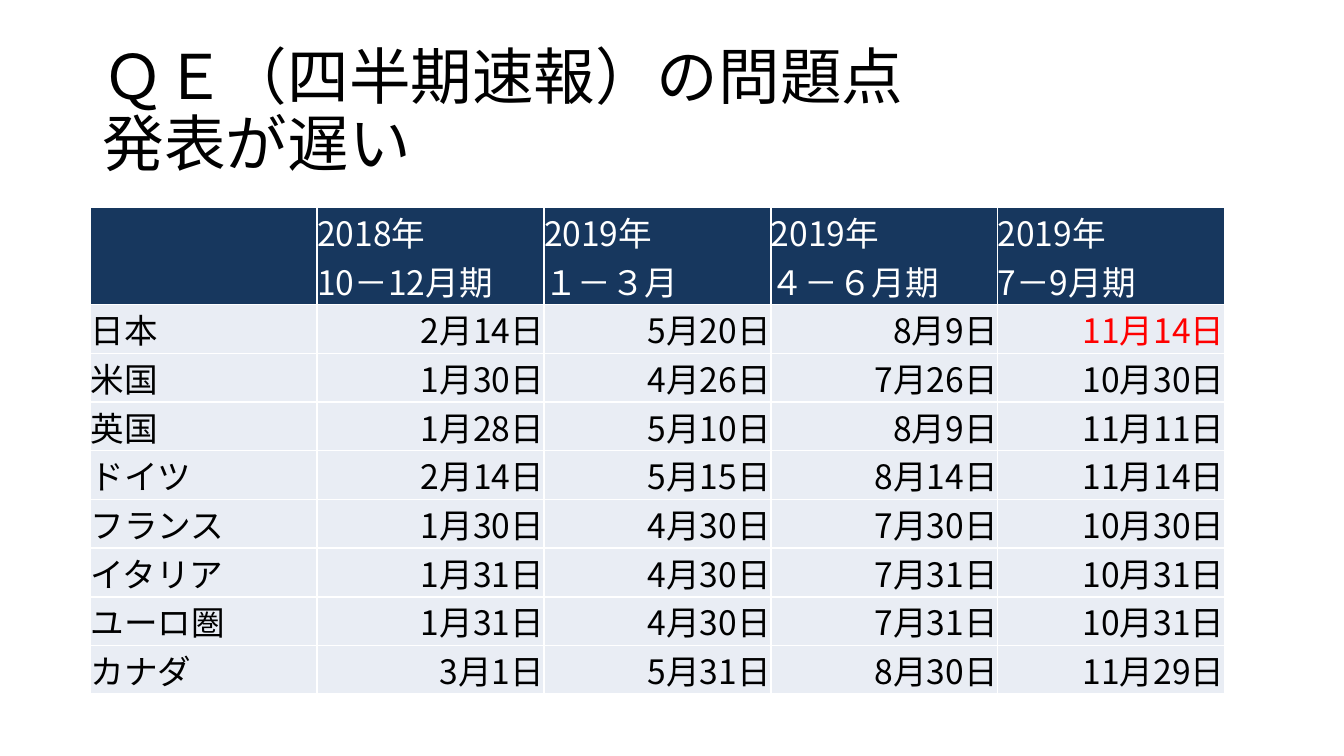
from lxml import etree
from pptx import Presentation
from pptx.dml.color import RGBColor
from pptx.enum.text import MSO_ANCHOR, MSO_AUTO_SIZE, PP_ALIGN
from pptx.oxml.ns import qn
from pptx.util import Cm, Pt

LEFT, RIGHT = PP_ALIGN.LEFT, PP_ALIGN.RIGHT
MIDDLE = MSO_ANCHOR.MIDDLE
NO_AUTOFIT = MSO_AUTO_SIZE.NONE
TITLE_ONLY = 5
FONT = "Noto Sans CJK JP"
COLORS = {
    "header": "17375E",
    "body": "E9EDF4",
    "border": "FFFFFF",
    "header_text": "FFFFFF",
    "text": "000000",
    "late": "FF0000",
}

TITLE = "ＱＥ（四半期速報）の問題点　\v発表が遅い"
PERIODS = ["", "2018年\n10－12月期", "2019年\n１－３月", "2019年\n４－６月期", "2019年\n7－9月期"]
RELEASES = [
    ["日本", "2月14日", "5月20日", "8月9日", "11月14日"],
    ["米国", "1月30日", "4月26日", "7月26日", "10月30日"],
    ["英国", "1月28日", "5月10日", "8月9日", "11月11日"],
    ["ドイツ", "2月14日", "5月15日", "8月14日", "11月14日"],
    ["フランス", "1月30日", "4月30日", "7月30日", "10月30日"],
    ["イタリア", "1月31日", "4月30日", "7月31日", "10月31日"],
    ["ユーロ圏", "1月31日", "4月30日", "7月31日", "10月31日"],
    ["カナダ", "3月1日", "5月31日", "8月30日", "11月29日"],
]
LATE_CELL = (1, 4)


def rgb(name):
    return RGBColor.from_string(COLORS[name])


def format_text(tf, size, color, align):
    for p in tf.paragraphs:
        p.alignment = align
        for r in p.runs:
            r.font.size = Pt(size)
            r.font.bold = False
            r.font.color.rgb = rgb(color)
            r.font.name = FONT
            etree.SubElement(r.font._element, qn("a:ea"), typeface=FONT)


def set_borders(cell, color, width):
    tcPr = cell._tc.get_or_add_tcPr()
    for side in ("a:lnL", "a:lnR", "a:lnT", "a:lnB"):
        ln = etree.SubElement(tcPr, qn(side), w=str(Pt(width)))
        fill = etree.SubElement(ln, qn("a:solidFill"))
        etree.SubElement(fill, qn("a:srgbClr"), val=COLORS[color])


def add_title(slide, left, top, width, height):
    sp = slide.shapes.title
    sp.left, sp.top, sp.width, sp.height = left, top, width, height
    tf = sp.text_frame
    tf.text = TITLE
    tf.word_wrap = True
    tf.auto_size = NO_AUTOFIT
    tf.vertical_anchor = MIDDLE
    tf.margin_left = tf.margin_right = Cm(0.19)
    tf.margin_top = tf.margin_bottom = Cm(0.1)
    tf.paragraphs[0].line_spacing = 0.9
    format_text(tf, 33, "text", LEFT)


def add_release_table(slide, left, top, width, height):
    rows = [PERIODS] + RELEASES
    table = slide.shapes.add_table(len(rows), len(PERIODS), left, top, width, height).table
    table.horz_banding = False

    # The two-line header is twice as high as a body row
    unit = height // (len(rows) + 1)
    for i, row in enumerate(table.rows):
        row.height = unit * (2 if i == 0 else 1)

    for i, values in enumerate(rows):
        for j, value in enumerate(values):
            cell = table.cell(i, j)
            cell.margin_left = cell.margin_right = 0
            cell.margin_top = cell.margin_bottom = 0
            cell.vertical_anchor = MIDDLE
            set_borders(cell, "border", 1)
            cell.fill.solid()
            cell.fill.fore_color.rgb = rgb("body" if i else "header")
            cell.text_frame.text = value
            color = "text" if i else "header_text"
            if (i, j) == LATE_CELL:
                color = "late"
            format_text(cell.text_frame, 18, color, RIGHT if i and j else LEFT)


def main():
    prs = Presentation()
    prs.slide_width, prs.slide_height = Cm(25.4), Cm(14.29)
    slide = prs.slides.add_slide(prs.slide_layouts[TITLE_ONLY])
    add_title(slide, Cm(1.75), Cm(0.76), Cm(21.9), Cm(2.76))
    add_release_table(slide, Cm(1.71), Cm(3.92), Cm(21.43), Cm(7.7))
    prs.save("out.pptx")


if __name__ == "__main__":
    main()
